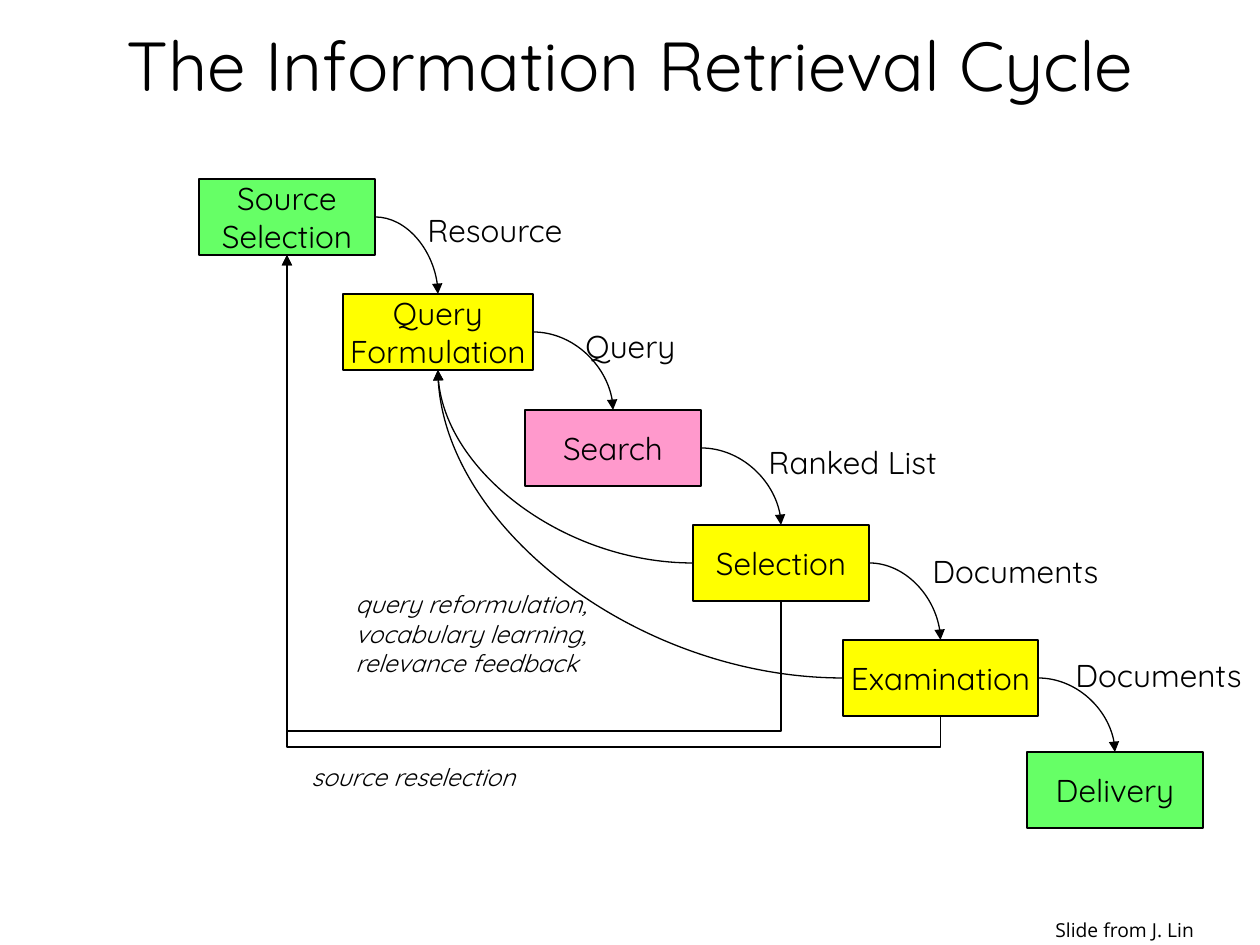
from dataclasses import dataclass

from lxml.etree import SubElement
from pptx import Presentation
from pptx.dml.color import RGBColor
from pptx.enum.shapes import MSO_CONNECTOR, MSO_SHAPE
from pptx.enum.text import MSO_ANCHOR, MSO_AUTO_SIZE, PP_ALIGN
from pptx.oxml.ns import qn
from pptx.util import Pt

PX = 914400 / 126
TOP, LEFT, BOTTOM, RIGHT = range(4)


@dataclass(frozen=True)
class Theme:
    ink: RGBColor = RGBColor(0, 0, 0)
    green: RGBColor = RGBColor(0x66, 0xFF, 0x66)
    yellow: RGBColor = RGBColor(0xFF, 0xFF, 0)
    pink: RGBColor = RGBColor(0xFF, 0x99, 0xCC)
    font: str = "Quicksand"
    credit_font: str = "Open Sans"
    title_size: float = 39.6
    body_size: float = 18
    note_size: float = 14
    credit_size: float = 11
    line_width: float = 0.75


THEME = Theme()

# Step text, fill, box, label of the result it hands on, label box
STEPS = [
    (["Source", "Selection"], THEME.green, (199, 179, 176, 76),
     "Resource", (415, 205, 169, 50)),
    (["Query", "Formulation"], THEME.yellow, (343, 294, 190, 76),
     "Query", (573, 321, 120, 50)),
    (["Search"], THEME.pink, (525, 410, 176, 76),
     "Ranked List", (756, 437, 198, 50)),
    (["Selection"], THEME.yellow, (693, 525, 176, 76),
     "Documents", (920, 546, 203, 50)),
    (["Examination"], THEME.yellow, (843, 640, 195, 76),
     "Documents", (1063, 650, 203, 50)),
    (["Delivery"], THEME.green, (1027, 752, 176, 76), None, None),
]


def emu(*lengths):
    return [round(length * PX) for length in lengths]


def write_lines(frame, lines, size, font=THEME.font, align=PP_ALIGN.LEFT, italic=None):
    for index, line in enumerate(lines):
        paragraph = frame.paragraphs[0] if index == 0 else frame.add_paragraph()
        paragraph.alignment = align
        run = paragraph.add_run()
        run.text = line
        run.font.size = Pt(size)
        run.font.name = font
        run.font.italic = italic
        run.font.color.rgb = THEME.ink


def add_label(slide, box, lines, size, **style):
    frame = slide.shapes.add_textbox(*emu(*box)).text_frame
    frame.word_wrap = False
    frame.auto_size = MSO_AUTO_SIZE.SHAPE_TO_FIT_TEXT
    write_lines(frame, lines, size, **style)


def add_title(slide, box, text):
    frame = slide.shapes.add_textbox(*emu(*box)).text_frame
    frame.word_wrap = True
    frame.vertical_anchor = MSO_ANCHOR.MIDDLE
    write_lines(frame, [text], THEME.title_size, align=PP_ALIGN.CENTER)


def add_step(slide, box, lines, fill):
    step = slide.shapes.add_shape(MSO_SHAPE.RECTANGLE, *emu(*box))
    step.shadow.inherit = False
    step.fill.solid()
    step.fill.fore_color.rgb = fill
    step.line.color.rgb = THEME.ink
    step.line.width = Pt(THEME.line_width)
    frame = step.text_frame
    frame.word_wrap = False
    frame.vertical_anchor = MSO_ANCHOR.MIDDLE
    write_lines(frame, lines, THEME.body_size, align=PP_ALIGN.CENTER)
    return step


def add_arrow(slide, kind, source, source_side, target, target_side):
    arrow = slide.shapes.add_connector(kind, 0, 0, 0, 0)
    arrow.begin_connect(source, source_side)
    arrow.end_connect(target, target_side)
    arrow.line.color.rgb = THEME.ink
    arrow.line.width = Pt(THEME.line_width)
    properties = arrow._element.spPr
    SubElement(properties.find(qn("a:ln")), qn("a:tailEnd"), type="triangle")
    SubElement(properties, qn("a:effectLst"))
    return arrow


def add_curve(slide, *ends):
    """Quarter curve that leaves sideways and arrives vertically."""
    arrow = add_arrow(slide, MSO_CONNECTOR.CURVE, *ends)
    arrow._element.spPr.find(qn("a:prstGeom")).set("prst", "curvedConnector2")


def add_return(slide, source, target, lane):
    """Elbow from source down to the lane, left, and up to target."""
    arrow = add_arrow(slide, MSO_CONNECTOR.ELBOW, source, BOTTOM, target, BOTTOM)
    run, rise = arrow.width, arrow.height
    drop = emu(lane)[0] - arrow.begin_y
    center_x, center_y = arrow.left + run // 2, arrow.top + rise // 2

    # The preset starts sideways, so it is mirrored and turned a quarter.
    properties = arrow._element.spPr
    transform = properties.find(qn("a:xfrm"))
    transform.attrib.pop("flipV", None)
    transform.set("flipH", "1")
    transform.set("rot", str(90 * 60000))
    arrow.left, arrow.top = center_x - rise // 2, center_y - run // 2
    arrow.width, arrow.height = rise, run
    guides = properties.find(qn("a:prstGeom")).get_or_add_avLst()
    SubElement(guides, qn("a:gd"), name="adj1",
               fmla=f"val {round(-drop / rise * 100000)}")


def add_cycle(slide):
    steps = [add_step(slide, box, lines, fill) for lines, fill, box, _, _ in STEPS]
    for source, target in zip(steps, steps[1:]):
        add_curve(slide, source, RIGHT, target, TOP)
    for _, _, _, result, box in STEPS:
        if result:
            add_label(slide, box, [result], THEME.body_size)

    source_selection, formulation, _, selection, examination, _ = steps
    for step, lane in ((examination, 747), (selection, 731)):
        add_curve(slide, step, LEFT, formulation, BOTTOM)
        add_return(slide, step, source_selection, lane)
    add_label(slide, (343, 583, 273, 102),
              ["query reformulation,", "vocabulary learning,", "relevance feedback"],
              THEME.note_size, italic=True)
    add_label(slide, (299, 756, 230, 43), ["source reselection"],
              THEME.note_size, italic=True)


def main():
    deck = Presentation()
    deck.slide_width, deck.slide_height = emu(1260, 945)
    slide = deck.slides.add_slide(deck.slide_layouts[6])
    add_title(slide, (63, 0, 1134, 127), "The Information Retrieval Cycle")
    add_cycle(slide)
    add_label(slide, (1043, 912, 174, 37), ["Slide from J. Lin"],
              THEME.credit_size, font=THEME.credit_font)
    deck.save("out.pptx")


if __name__ == "__main__":
    main()
